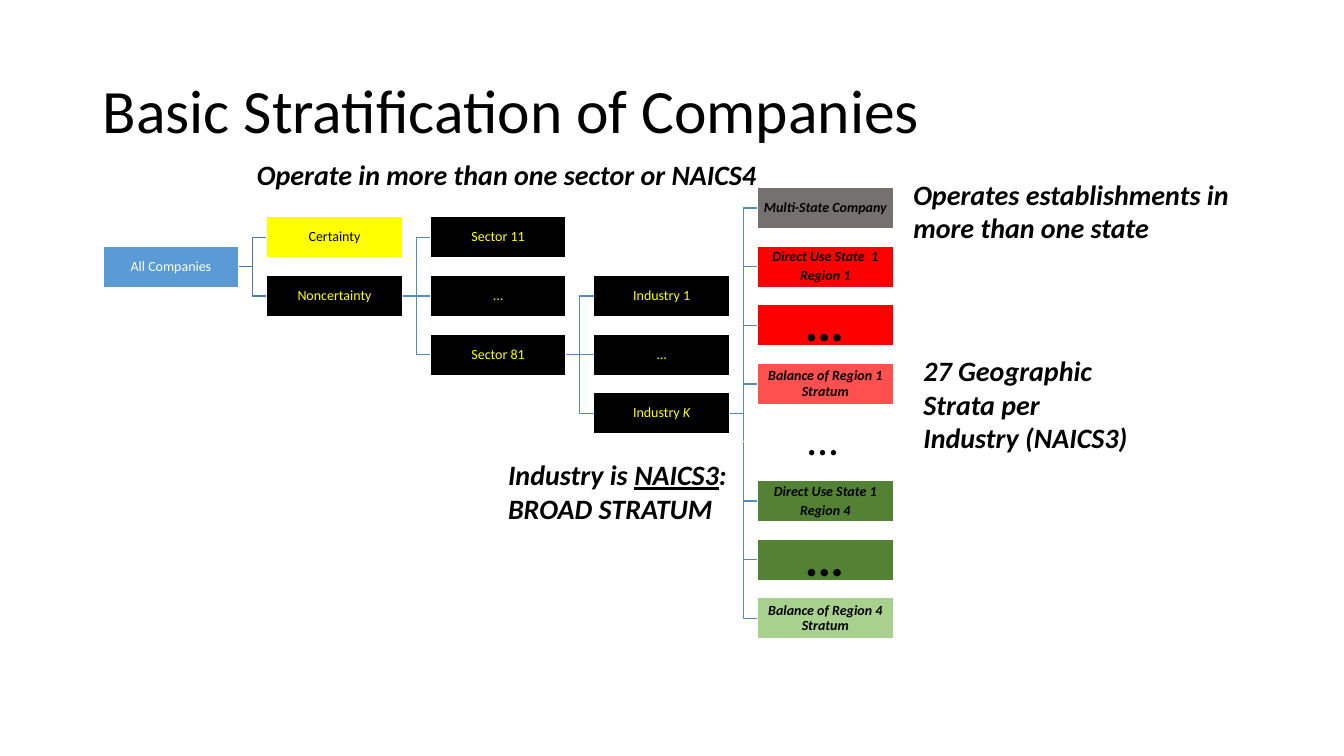
from lxml import etree
from pptx import Presentation
from pptx import util as u
from pptx.dml.color import RGBColor
from pptx.enum import shapes, text
from pptx.oxml import ns

FONT = "Calibri"
COLORS = {
    "white": "FFFFFF", "black": "000000", "yellow": "FFFF00", "blue": "5B9BD5",
    "gray": "767171", "red": "FF0000", "light red": "FF5050",
    "green": "548235", "light green": "A9D18E",
    "link": "538DC1", "first link": "497CAB",
}

# Tree grid: columns run left to right, rows top to bottom (half rows allowed)
LEFT, TOP = 1.02, 1.86
COLUMN, ROW = (7.51 - LEFT) / 4, (5.93 - TOP) / 7
BOX_WIDTH, BOX_HEIGHT = 1.35, 0.41

PLAIN = {"size": 10}
STRONG = {"size": 10, "bold": True, "italic": True}
NOTE = {"size": 20, "bold": True, "italic": True}

# Each node: name, column, row, fill, text colour, style, paragraphs of spans
NODES = [
    ("all", 0, 1, "blue", "white", PLAIN, [["All Companies"]]),
    ("certainty", 1, 0.5, "yellow", "black", PLAIN, [["Certainty"]]),
    ("noncertainty", 1, 1.5, "black", "yellow", PLAIN, [["Noncertainty"]]),
    ("sector 11", 2, 0.5, "black", "yellow", PLAIN, [["Sector 11"]]),
    ("sectors", 2, 1.5, "black", "yellow", PLAIN, [["…"]]),
    ("sector 81", 2, 2.5, "black", "yellow", PLAIN, [["Sector 81"]]),
    ("industry 1", 3, 1.5, "black", "yellow", PLAIN, [["Industry 1"]]),
    ("industries", 3, 2.5, "black", "yellow", PLAIN, [["…"]]),
    ("industry k", 3, 3.5, "black", "yellow", PLAIN,
     [["Industry ", ("K", {"italic": True})]]),
    ("multi-state", 4, 0, "gray", "black", STRONG, [["Multi-State Company"]]),
    ("direct 1", 4, 1, "red", "black", STRONG,
     [["Direct Use State  1"], ["Region 1"]]),
    ("states 1", 4, 2, "red", "black", {**STRONG, "size": 36}, [["…"]]),
    ("balance 1", 4, 3, "light red", "black", STRONG,
     [["Balance of Region 1 Stratum"]]),
    ("regions", 3.99, 3.98, "white", "black", {"size": 32, "italic": True}, [["…"]]),
    ("direct 4", 4, 5, "green", "black", STRONG,
     [["Direct Use State 1"], ["Region 4"]]),
    ("states 4", 4, 6, "green", "black", {**STRONG, "size": 36}, [["…"]]),
    ("balance 4", 4, 7, "light green", "black", STRONG,
     [["Balance of Region 4 Stratum"]]),
]

# Parent, link colour, children from the back to the front
BRANCHES = [
    ("industry k", "link", ["balance 4", "states 4", "direct 4"]),
    ("industry k", "white", ["regions"]),
    ("industry k", "link", ["balance 1", "states 1", "direct 1", "multi-state"]),
    ("sector 81", "link", ["industry k", "industries", "industry 1"]),
    ("noncertainty", "link", ["sector 81", "sectors", "sector 11"]),
    ("all", "first link", ["noncertainty", "certainty"]),
]

# Notes beside the tree: left, top, width, height, spans
NOTES = [
    (8.96, 1.71, 3.93, 0.77, ["Operates establishments in more than one state"]),
    (9.06, 3.46, 2.25, 1.41, ["27 Geographic Strata per Industry (NAICS3)"]),
    (4.94, 4.49, 2.45, 0.77,
     ["Industry is ", ("NAICS3", {"underline": True}), ": BROAD STRATUM"]),
    (2.45, 1.51, 6.47, 0.44, ["Operate in more than one sector or NAICS4"]),
]


def color(name):
    return RGBColor.from_string(COLORS[name])


def write_spans(para, spans, style, ink):
    for span in spans:
        words, extra = span if isinstance(span, tuple) else (span, {})
        run = para.add_run()
        run.text = words
        look = {**style, **extra}
        run.font.name = FONT
        run.font.size = u.Pt(look["size"])
        run.font.bold = look.get("bold", False)
        run.font.italic = look.get("italic", False)
        run.font.underline = look.get("underline", False)
        run.font.color.rgb = color(ink)


def add_node(page, column, row, fill, ink, style, paragraphs):
    box = page.shapes.add_shape(
        shapes.MSO_SHAPE.RECTANGLE,
        u.Inches(LEFT + column * COLUMN), u.Inches(TOP + row * ROW),
        u.Inches(BOX_WIDTH), u.Inches(BOX_HEIGHT))
    box.shadow.inherit = False
    box.fill.solid()
    box.fill.fore_color.rgb = color(fill)
    box.line.color.rgb = color("white")
    box.line.width = u.Pt(1)
    frame = box.text_frame
    frame.word_wrap = True
    frame.vertical_anchor = text.MSO_ANCHOR.MIDDLE
    frame.margin_left = frame.margin_right = u.Inches(0.01)
    frame.margin_top = frame.margin_bottom = u.Inches(0.01)
    for index, spans in enumerate(paragraphs):
        para = frame.add_paragraph() if index else frame.paragraphs[0]
        para.alignment = text.PP_ALIGN.CENTER
        para.line_spacing = 0.9
        if index:
            para.space_before = u.Pt(3)
        write_spans(para, spans, style, ink)
    return box


def add_link(page, parent, child, ink):
    level = abs(parent.top - child.top) < u.Inches(0.01)
    kind = shapes.MSO_CONNECTOR.STRAIGHT if level else shapes.MSO_CONNECTOR.ELBOW
    link = page.shapes.add_connector(kind, 0, 0, 0, 0)
    link.begin_connect(parent, 3)
    link.end_connect(child, 1)
    link.line.color.rgb = color(ink)
    link.line.width = u.Pt(1)
    etree.SubElement(link._element.spPr, ns.qn("a:effectLst"))


def add_text(page, left, top, width, height, spans, style):
    box = page.shapes.add_textbox(*map(u.Inches, (left, top, width, height)))
    box.text_frame.word_wrap = True
    write_spans(box.text_frame.paragraphs[0], spans, style, "black")
    return box


def main():
    deck = Presentation()
    deck.slide_width, deck.slide_height = u.Inches(13.33), u.Inches(7.5)
    page = deck.slides.add_slide(deck.slide_layouts[6])

    # Title
    title = add_text(page, 0.92, 0.4, 11.5, 1.45,
                     ["Basic Stratification of Companies"], {"size": 44})
    title.text_frame.vertical_anchor = text.MSO_ANCHOR.MIDDLE
    title.text_frame.paragraphs[0].line_spacing = 0.9

    # Stratification tree
    boxes = {name: add_node(page, *node) for name, *node in NODES}
    for parent, ink, children in BRANCHES:
        for child in children:
            add_link(page, boxes[parent], boxes[child], ink)

    # Notes
    for *place, spans in NOTES:
        add_text(page, *place, spans, NOTE)

    deck.save("out.pptx")


if __name__ == "__main__":
    main()
